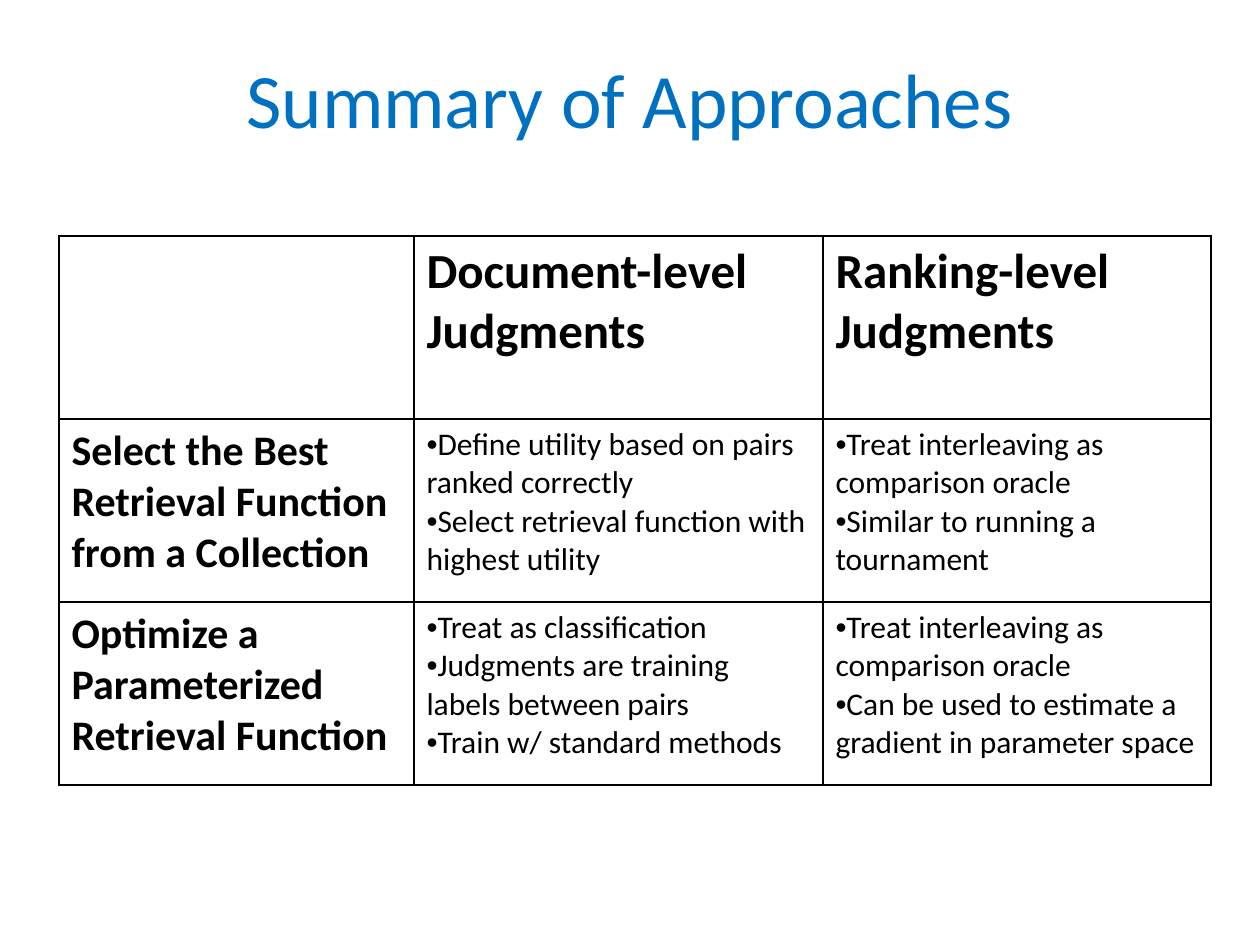
from lxml import etree
from pptx import Presentation
from pptx.dml.color import RGBColor
from pptx.enum.text import MSO_ANCHOR, PP_ALIGN
from pptx.oxml.ns import qn
from pptx.util import Pt

MIDDLE = MSO_ANCHOR.MIDDLE
CENTER = PP_ALIGN.CENTER
SCALE = 914400 / 126
FONT = "Calibri"
COLORS = {"title": "0070C0", "text": "000000", "line": "000000", "back": "FFFFFF"}

COLS = [355, 409, 388]
ROW = 183
HEADS = ["", "Document-level Judgments", "Ranking-level Judgments"]
ROWS = [
    ("Select the Best Retrieval Function from a Collection",
     ["Define utility based on pairs ranked correctly",
      "Select retrieval function with highest utility"],
     ["Treat interleaving as comparison oracle",
      "Similar to running a tournament"]),
    ("Optimize a Parameterized Retrieval Function",
     ["Treat as classification",
      "Judgments are training labels between pairs",
      "Train w/ standard methods"],
     ["Treat interleaving as comparison oracle",
      "Can be used to estimate a gradient in parameter space"]),
]


def px(n):
    return round(n * SCALE)


def style(para, size, color, bold=False):
    for run in para.runs:
        font = run.font
        font.name = FONT
        font.size = Pt(size)
        font.bold = bold
        font.color.rgb = RGBColor.from_string(COLORS[color])


def add_title(slide, text):
    box = slide.shapes.add_textbox(px(63), px(38), px(1134), px(120))
    frame = box.text_frame
    frame.word_wrap = True
    frame.vertical_anchor = MIDDLE
    frame.text = text
    para = frame.paragraphs[0]
    para.alignment = CENTER
    style(para, 44, "title")


def add_bullet(para):
    props = para._p.get_or_add_pPr()
    props.set("marL", "0")
    props.set("indent", "0")
    etree.SubElement(props, qn("a:buFont"), typeface="Arial")
    etree.SubElement(props, qn("a:buChar"), char="•")


def set_cell(cell, text, size):
    # Borders come before the fill in the cell's XML
    props = cell._tc.get_or_add_tcPr()
    for side in ("lnL", "lnR", "lnT", "lnB"):
        line = etree.SubElement(props, qn("a:" + side), w=str(Pt(1)))
        fill = etree.SubElement(line, qn("a:solidFill"))
        etree.SubElement(fill, qn("a:srgbClr"), val=COLORS["line"])
    cell.fill.solid()
    cell.fill.fore_color.rgb = RGBColor.from_string(COLORS["back"])

    # A list becomes bullets, a plain string a bold heading
    listed = isinstance(text, list)
    cell.text_frame.text = "\n".join(text) if listed else text
    for para in cell.text_frame.paragraphs:
        if listed:
            add_bullet(para)
        style(para, size, "text", bold=not listed)


def add_grid(slide):
    shape = slide.shapes.add_table(len(ROWS) + 1, len(COLS), px(59), px(236),
                                   px(sum(COLS)), px(ROW * (len(ROWS) + 1)))
    table = shape.table
    table.first_row = False
    table.horz_banding = False
    for col, width in zip(table.columns, COLS):
        col.width = px(width)
    for row in table.rows:
        row.height = px(ROW)

    for c, head in enumerate(HEADS):
        set_cell(table.cell(0, c), head, 28)
    for r, row in enumerate(ROWS, 1):
        for c, text in enumerate(row):
            set_cell(table.cell(r, c), text, 18 if c else 24)


def main():
    deck = Presentation()
    deck.slide_width = px(1260)
    deck.slide_height = px(945)
    slide = deck.slides.add_slide(deck.slide_layouts[6])
    add_title(slide, "Summary of Approaches")
    add_grid(slide)
    deck.save("out.pptx")


if __name__ == "__main__":
    main()
